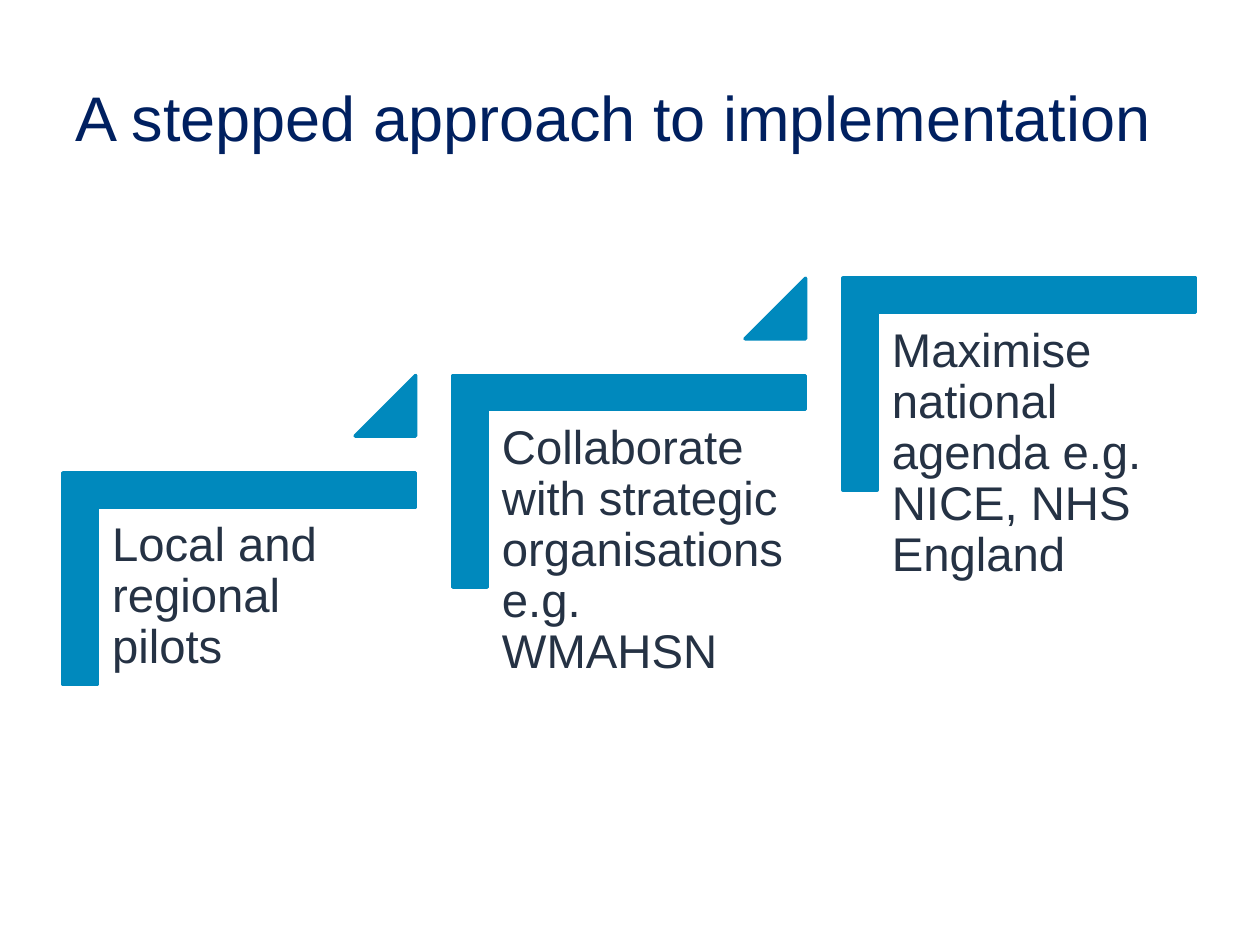
from pptx import Presentation
from pptx.dml.color import RGBColor
from pptx.enum.shapes import MSO_SHAPE
from pptx.enum.text import MSO_ANCHOR, MSO_AUTO_SIZE, PP_ALIGN
from pptx.util import Cm, Pt

CORNER = MSO_SHAPE.CORNER
ARROW = MSO_SHAPE.ISOSCELES_TRIANGLE
LEFT = PP_ALIGN.LEFT
TOP, MIDDLE = MSO_ANCHOR.TOP, MSO_ANCHOR.MIDDLE
FIXED = MSO_AUTO_SIZE.NONE

BLUE, NAVY, SLATE = "0089BD", "002060", "253244"
STEPS = [
    "Local and regional pilots",
    "Collaborate with strategic organisations e.g. WMAHSN",
    "Maximise national agenda e.g. NICE, NHS England",
]
WIDE, HIGH = 7.11, 4.27
START, BASE = 1.27, 9.53
PITCH, RISE = 7.86, 1.96


def tint(code):
    """Return the colour for a hex string."""
    return RGBColor.from_string(code)


def assign(item, values):
    """Set each named value on an object."""
    for name, value in values.items():
        setattr(item, name, value)


def write(shape, text, size, color, frame, para):
    """Fill a shape with one formatted paragraph."""
    box = shape.text_frame
    box.text = text
    assign(box, {"word_wrap": True, "auto_size": FIXED, **frame})
    line = box.paragraphs[0]
    assign(line, {"alignment": LEFT, **para})
    assign(line.font, {"name": "Arial", "size": Pt(size)})
    line.font.color.rgb = tint(color)


def draw(slide, kind, box, *ratios):
    """Add a blue preset shape in a box given in centimetres."""
    shape = slide.shapes.add_shape(kind, *map(Cm, box))
    for index, ratio in enumerate(ratios):
        shape.adjustments[index] = ratio
    shape.shadow.inherit = False
    shape.fill.solid()
    shape.fill.fore_color.rgb = tint(BLUE)
    shape.line.color.rgb = tint(BLUE)
    shape.line.width = Pt(2)
    return shape


def head(slide, text, box):
    """Place and format the title."""
    title = slide.shapes.title
    names = ("left", "top", "width", "height")
    assign(title, dict(zip(names, map(Cm, box))))
    write(title, text, 36, NAVY, {"vertical_anchor": MIDDLE}, {})


def step(slide, text, left, top, more):
    """Draw one stair with its label, and an arrow if more follow."""
    shift = (WIDE - HIGH) / 2
    box = (left + shift, top - shift, HIGH, WIDE)
    draw(slide, CORNER, box, 0.161, 0.161).rotation = 90
    area = (left + 0.71, top + 0.69, 6.43, 5.64)
    label = slide.shapes.add_textbox(*map(Cm, area))
    sides = ("left", "top", "right", "bottom")
    frame = {f"margin_{side}": Cm(0.28) for side in sides}
    frame["vertical_anchor"] = TOP
    write(label, text, 27, SLATE, frame, {"line_spacing": 0.9})
    if more:
        size = 1.22
        draw(slide, ARROW, (left + WIDE - size, top - RISE, size, size), 1)


def main():
    """Build the slide and save it."""
    deck = Presentation()
    deck.slide_width, deck.slide_height = Cm(25.4), Cm(19.05)
    slide = deck.slides.add_slide(deck.slide_layouts[5])
    head(slide, "A stepped approach to implementation",
         (1.27, 0.76, 22.86, 3.18))
    for index, text in enumerate(STEPS):
        step(slide, text, START + index * PITCH, BASE - index * RISE,
             index < len(STEPS) - 1)
    deck.save("out.pptx")


if __name__ == "__main__":
    main()
